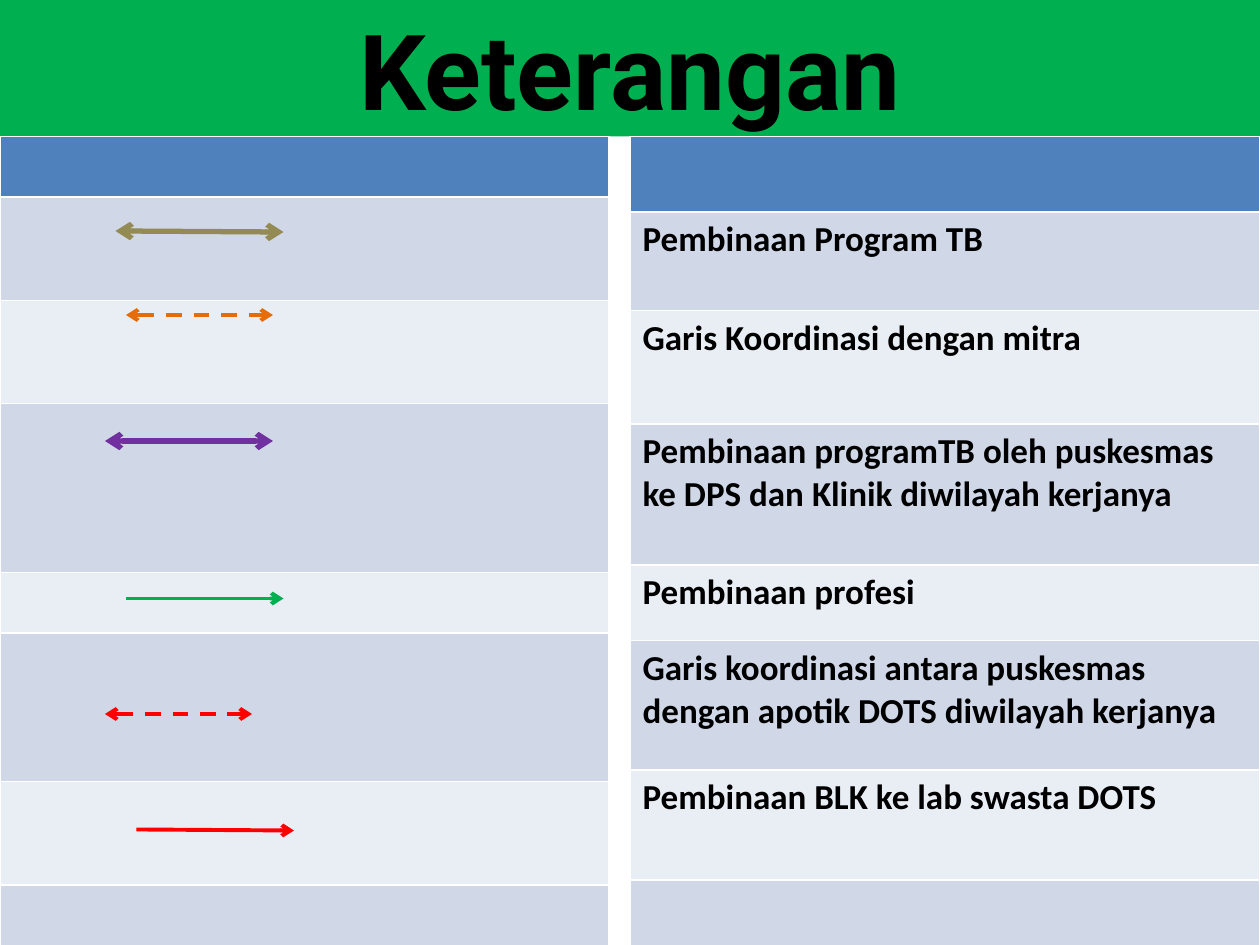
from lxml import etree
from pptx import Presentation
from pptx.dml.color import RGBColor
from pptx.enum.dml import MSO_LINE
from pptx.enum.shapes import MSO_CONNECTOR
from pptx.enum.text import MSO_ANCHOR, PP_ALIGN
from pptx.oxml.ns import qn
from pptx.util import Inches, Pt

STRAIGHT = MSO_CONNECTOR.STRAIGHT
DASH = MSO_LINE.DASH
MIDDLE = MSO_ANCHOR.MIDDLE
CENTER = PP_ALIGN.CENTER

TITLE_ONLY = 5
COLUMNS, ROWS = 120, 90
TITLE_ROWS = 13

COLORS = {
    "text": "000000",
    "green": "00B050",
    "header": "4F81BD",
    "dark band": "D0D8E8",
    "light band": "E9EDF4",
    "olive": "948A54",
    "orange": "E46C0A",
    "purple": "7030A0",
    "red": "FF0000",
}

SYMBOL_HEIGHTS = [5.76, 9.84, 9.84, 16.08, 5.76, 14.16, 9.84, 5.76]
MEANING_HEIGHTS = [7.2, 9.36, 10.8, 13.44, 7.2, 12.36, 10.44, 6.24]
MEANINGS = [
    "",
    "Pembinaan Program TB",
    "Garis Koordinasi dengan mitra",
    "Pembinaan programTB oleh puskesmas ke DPS dan Klinik diwilayah kerjanya",
    "Pembinaan profesi",
    "Garis koordinasi antara puskesmas dengan apotik DOTS diwilayah kerjanya",
    "Pembinaan BLK ke lab swasta DOTS",
    "",
]

# start column, end column, start row, end row, colour, width, dashed, two-headed
ARROWS = [
    (11, 27, 22, 22.1, "olive", 3, False, True),
    (12, 26, 30, 30, "orange", 2.25, True, True),
    (12, 27, 57, 57, "green", 2.25, False, False),
    (10, 26, 42, 42, "purple", 3, False, True),
    (10, 24, 68, 68, "red", 2.25, True, True),
    (13, 28, 79, 79.1, "red", 2.25, False, False),
]


def color(name):
    return RGBColor.from_string(COLORS[name])


class LegendSlide:
    """Holds the style and the slide, measured on a grid of COLUMNS by ROWS."""

    def __init__(self, presentation):
        self.column = presentation.slide_width / COLUMNS
        self.row = presentation.slide_height / ROWS
        self.slide = presentation.slides.add_slide(
            presentation.slide_layouts[TITLE_ONLY])

    def x(self, columns):
        return round(columns * self.column)

    def y(self, rows):
        return round(rows * self.row)

    def style(self, paragraph, font_name, size):
        font = paragraph.font
        font.name, font.size, font.bold = font_name, Pt(size), True
        font.color.rgb = color("text")

    def title(self, text):
        shape = self.slide.shapes.title
        shape.left, shape.top = 0, 0
        shape.width, shape.height = self.x(COLUMNS), self.y(TITLE_ROWS)
        shape.fill.solid()
        shape.fill.fore_color.rgb = color("green")
        frame = shape.text_frame
        frame.text = text
        frame.vertical_anchor = MIDDLE
        paragraph = frame.paragraphs[0]
        paragraph.alignment = CENTER
        self.style(paragraph, "Roboto", 60)

    def table(self, left, width, heights, texts):
        """Add a one-column banded table below the title."""
        table = self.slide.shapes.add_table(
            len(heights), 1, self.x(left), self.y(TITLE_ROWS),
            self.x(width), self.y(sum(heights))).table
        for index, (height, text) in enumerate(zip(heights, texts)):
            table.rows[index].height = self.y(height)
            cell = table.cell(index, 0)
            band = "dark band" if index % 2 else "light band"
            cell.fill.solid()
            cell.fill.fore_color.rgb = color(band if index else "header")
            if text:
                cell.text = text
                self.style(cell.text_frame.paragraphs[0], "Calibri", 20)

    def arrow(self, start, end, top, bottom, color_name, width, dashed, two_headed):
        connector = self.slide.shapes.add_connector(
            STRAIGHT, self.x(start), self.y(top), self.x(end), self.y(bottom))
        line = connector.line
        line.color.rgb = color(color_name)
        line.width = Pt(width)
        if dashed:
            line.dash_style = DASH
        properties = connector.element.spPr
        outline = properties.find(qn("a:ln"))
        for tag in ["a:headEnd", "a:tailEnd"] if two_headed else ["a:tailEnd"]:
            etree.SubElement(outline, qn(tag), type="arrow")
        etree.SubElement(properties, qn("a:effectLst"))


def main():
    presentation = Presentation()
    presentation.slide_width, presentation.slide_height = Inches(10), Inches(7.5)
    legend = LegendSlide(presentation)
    legend.title("Keterangan")
    legend.table(0, 58, SYMBOL_HEIGHTS, [""] * len(SYMBOL_HEIGHTS))
    legend.table(60, 60, MEANING_HEIGHTS, MEANINGS)
    for arrow in ARROWS:
        legend.arrow(*arrow)
    presentation.save("out.pptx")


if __name__ == "__main__":
    main()
